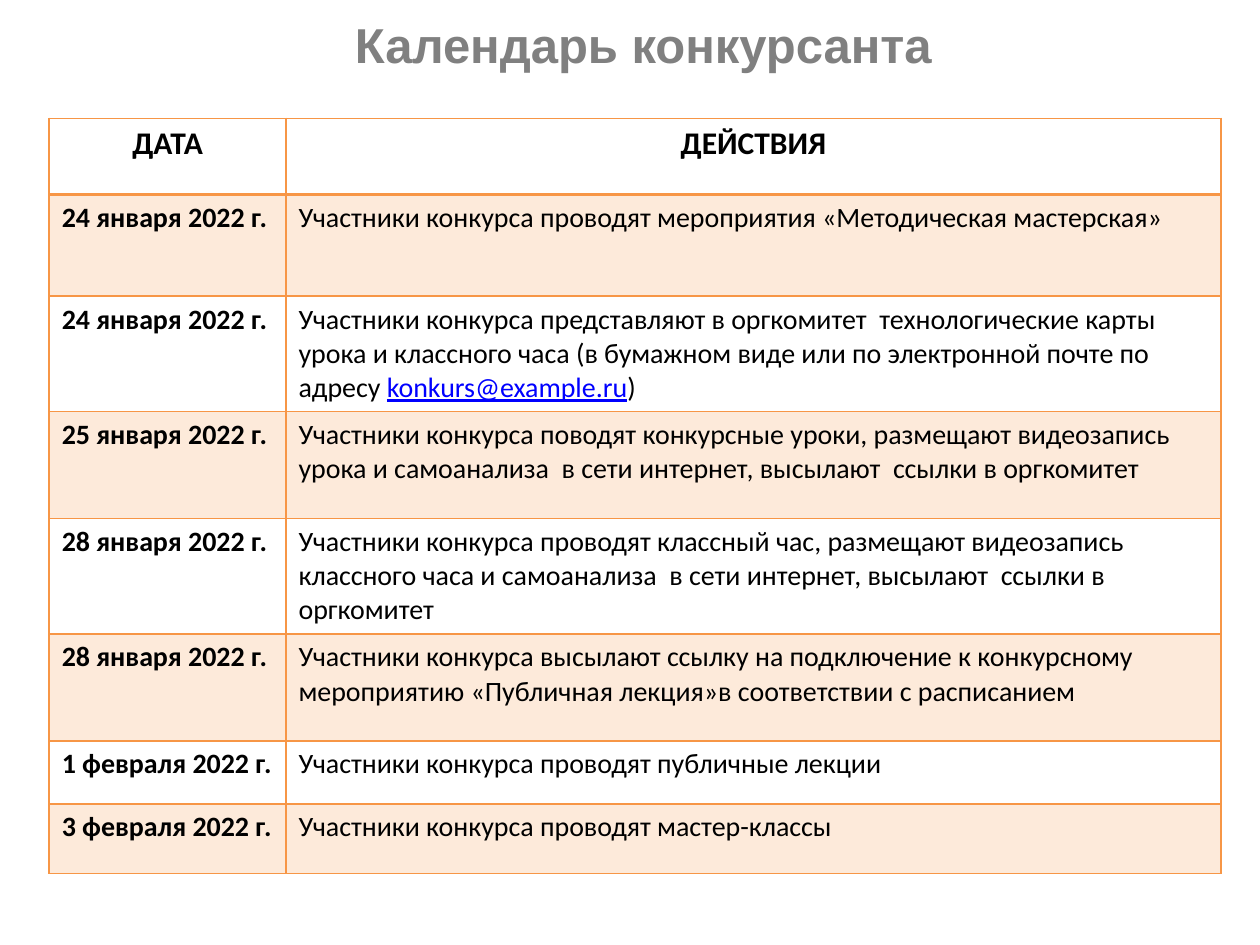
from lxml import etree
from pptx import Presentation
from pptx.dml.color import RGBColor
from pptx.enum import text as t
from pptx.oxml import ns
from pptx.util import Inches, Pt

ORANGE, TINT, BLACK, GREY, BLUE = "F79646", "FDEADA", "000000", "808080", "0000FF"
HEAD = ("ДАТА", "ДЕЙСТВИЯ")
MAIL = "konkurs@example.ru"
ROWS = [
    ("24 января 2022 г.", "Участники конкурса проводят мероприятия «Методическая мастерская»"),
    ("24 января 2022 г.", "Участники конкурса представляют в оргкомитет  технологические карты урока "
     f"и классного часа (в бумажном виде или по электронной почте по адресу {MAIL})"),
    ("25 января 2022 г.", "Участники конкурса поводят конкурсные уроки, размещают видеозапись урока "
     "и самоанализа  в сети интернет, высылают  ссылки в оргкомитет"),
    ("28 января 2022 г.", "Участники конкурса проводят классный час, размещают видеозапись классного "
     "часа и самоанализа  в сети интернет, высылают  ссылки в оргкомитет"),
    ("28 января 2022 г.", "Участники конкурса высылают ссылку на подключение к конкурсному "
     "мероприятию «Публичная лекция»в соответствии с расписанием"),
    ("1 февраля 2022 г.", "Участники конкурса проводят публичные лекции"),
    ("3 февраля 2022 г.", "Участники конкурса проводят мастер-классы"),
]
WIDTHS = (1.88, 7.42)
HEIGHTS = (0.6, 0.81, 0.85, 0.85, 0.85, 0.85, 0.5, 0.55)


def paint(font, color):
    """Give a font a solid colour from a hex string."""
    font.color.rgb = RGBColor.from_string(color)


def style(font, name, size, color, bold):
    """Set the face, size, colour and weight of a font."""
    font.name, font.size, font.bold = name, Pt(size), bold
    paint(font, color)


def border(cell, sides):
    """Draw the cell's borders from a map of side to width in points."""
    props = cell._tc.get_or_add_tcPr()
    for side in "LRTB":
        line = etree.SubElement(props, ns.qn(f"a:ln{side}"), w=str(Pt(sides[side])))
        fill = etree.SubElement(line, ns.qn("a:solidFill"))
        etree.SubElement(fill, ns.qn("a:srgbClr"), val=ORANGE)


def write(para, words):
    """Add the words as runs, with the mail address blue and underlined."""
    before, mail, after = words.partition(MAIL)
    for part in filter(None, (before, mail, after)):
        run = para.add_run()
        run.text = part
        if part == MAIL:
            paint(run.font, BLUE)
            run.font.underline = True


def add_title(slide, box):
    """Place and format the title placeholder in the box."""
    title = slide.shapes.title
    title.left, title.top, title.width, title.height = map(Inches, box)
    frame = title.text_frame
    frame.text = "Календарь конкурсанта"
    frame.vertical_anchor = t.MSO_ANCHOR.MIDDLE
    para = frame.paragraphs[0]
    para.alignment = t.PP_ALIGN.CENTER
    style(para.font, "Arial", 28, GREY, True)


def add_dates(slide, box):
    """Place the calendar table in the box."""
    rows = [HEAD, *ROWS]
    table = slide.shapes.add_table(len(rows), len(HEAD), *map(Inches, box)).table
    for col, width in zip(table.columns, WIDTHS):
        col.width = Inches(width)
    for i, (row, height) in enumerate(zip(rows, HEIGHTS)):
        table.rows[i].height = Inches(height)
        for j, words in enumerate(row):
            cell = table.cell(i, j)
            border(cell, {"L": 1, "R": 1, "T": 2 if i == 1 else 1, "B": 2 if i == 0 else 1})
            if i % 2:
                cell.fill.solid()
                cell.fill.fore_color.rgb = RGBColor.from_string(TINT)
            else:
                cell.fill.background()
            para = cell.text_frame.paragraphs[0]
            para.alignment = t.PP_ALIGN.LEFT if i else t.PP_ALIGN.CENTER
            write(para, words)
            style(para.font, "Calibri", 16 if i else 18, BLACK, i == 0 or j == 0)


def main():
    """Build the slide and save it."""
    deck = Presentation()
    deck.slide_width, deck.slide_height = Inches(10), Inches(7.5)
    slide = deck.slides.add_slide(deck.slide_layouts[5])
    add_title(slide, (0.47, 0, 9.27, 0.7))
    add_dates(slide, (0.39, 0.94, sum(WIDTHS), sum(HEIGHTS)))
    deck.save("out.pptx")


if __name__ == "__main__":
    main()
